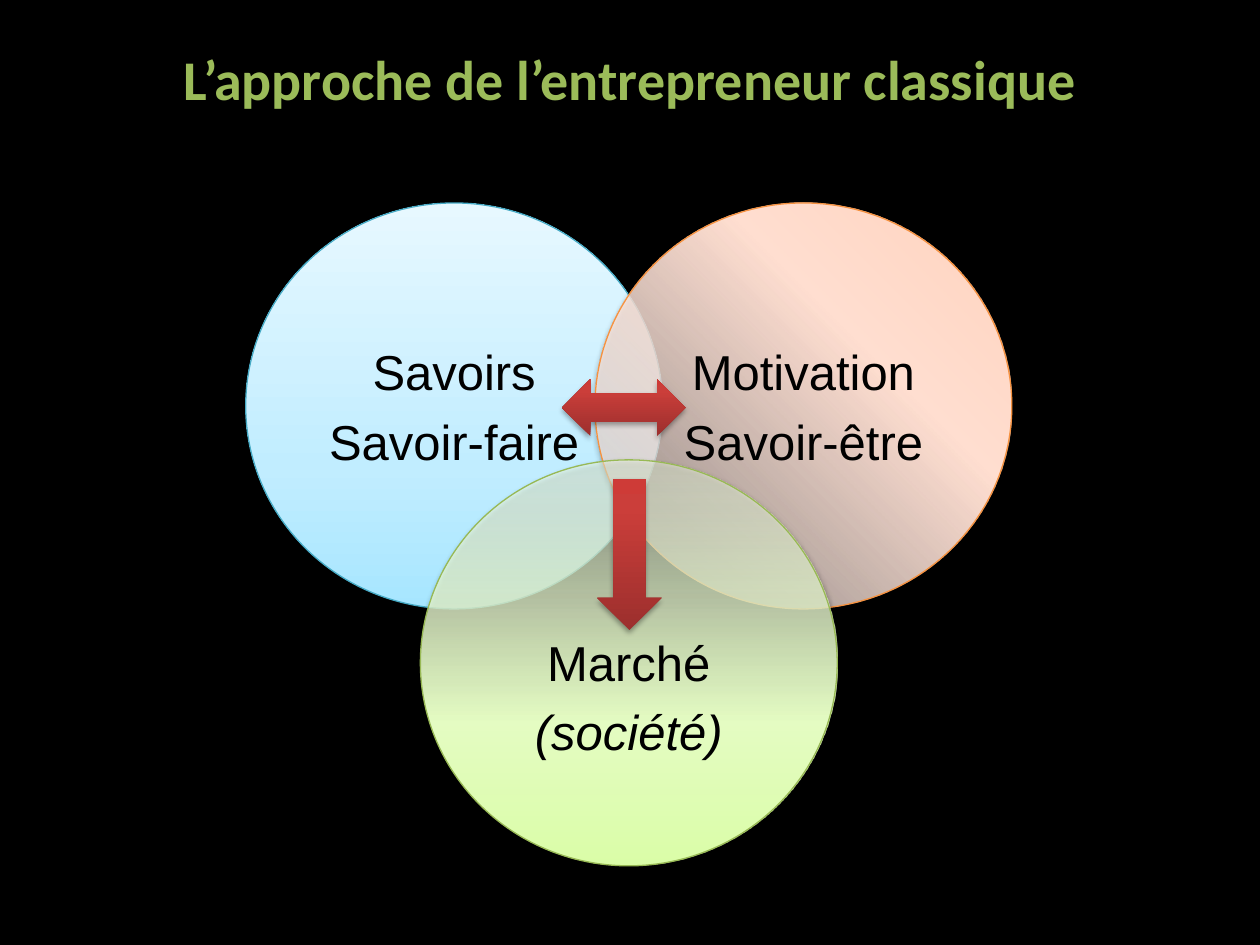
"""Build the slide on the classic entrepreneur's approach: three overlapping circles."""
import pptx
import pptx.util
import pptx.dml.color
import pptx.enum.shapes
import pptx.enum.text
import pptx.oxml
import pptx.oxml.ns

Pt = pptx.util.Pt
SHAPE = pptx.enum.shapes.MSO_SHAPE
CENTER = pptx.enum.text.PP_ALIGN.CENTER
MIDDLE = pptx.enum.text.MSO_ANCHOR.MIDDLE

COLORS = {
    "background": "000000", "title": "9BBB59", "text": "000000", "shadow": "000000",
    "blue_line": "46AAC5", "orange_line": "F69240", "green_line": "98B955",
}
GRADIENTS = {
    "blue": [(0, "A7E6FF", 100), (35, "C1EDFF", 100), (100, "E7F8FF", 100)],
    "orange": [(0, "FFD2BD", 100), (35, "FFDED0", 100), (100, "FFF2ED", 49)],
    "green": [(0, "DAFDA7", 100), (35, "E4FCC2", 100), (100, "F5FFE7", 49)],
    "red": [(0, "9C2F2D", 100), (80, "CB3E3A", 100), (100, "CE3B37", 100)],
}
TITLE = "L’approche de l’entrepreneur classique"
CIRCLES = [
    {"color": "blue", "column": 0, "row": 0, "angle": 90, "inset": 3.6,
     "lines": [("Savoirs", False), ("Savoir-faire", False)]},
    {"color": "orange", "column": 2, "row": 0, "angle": 225, "inset": 3.6,
     "lines": [("Motivation", False), ("Savoir-être", False)]},
    {"color": "green", "column": 1, "row": 1, "angle": 90, "inset": 42,
     "lines": [("Marché", False), ("(société)", True)]},
]
ARROWS = [
    (SHAPE.DOWN_ARROW, 341.3, 273.6, 36.7, 86.4),
    (SHAPE.LEFT_RIGHT_ARROW, 321.1, 216.7, 70.6, 32.4),
]
LEFT, TOP = 140.4, 116
STEP_X, STEP_Y = 99.8, 146.8
CIRCLE_W, CIRCLE_H = 238.2, 232


def rgb(name):
    return pptx.dml.color.RGBColor.from_string(COLORS[name])


def color_xml(value, alpha):
    return f'<a:srgbClr val="{value}"><a:alpha val="{alpha * 1000}"/></a:srgbClr>'


def add_xml(parent, tag, attributes, color):
    ns = pptx.oxml.ns.nsdecls("a")
    parent.append(pptx.oxml.parse_xml(f"<a:{tag} {ns} {attributes}>{color}</a:{tag}>"))


def add_shape(slide, kind, box, gradient, angle, shadow):
    s = slide.shapes.add_shape(kind, *map(Pt, box))
    s.fill.gradient()
    s.fill.gradient_angle = angle
    qn = pptx.oxml.ns.qn
    stops = s.element.spPr.find(qn("a:gradFill")).find(qn("a:gsLst"))
    for stop in list(stops):
        stops.remove(stop)
    for position, value, alpha in GRADIENTS[gradient]:
        add_xml(stops, "gs", f'pos="{position * 1000}"', color_xml(value, alpha))
    s.line.fill.background()
    s.shadow.inherit = False
    distance, alpha = shadow
    add_xml(s.element.spPr.find(qn("a:effectLst")), "outerShdw",
            f'blurRad="{Pt(3.1)}" dist="{Pt(distance)}" dir="5400000" rotWithShape="0"',
            color_xml(COLORS["shadow"], alpha))
    return s


def add_circle(slide, circle):
    box = (LEFT + circle["column"] * STEP_X, TOP + circle["row"] * STEP_Y, CIRCLE_W, CIRCLE_H)
    s = add_shape(slide, SHAPE.OVAL, box, circle["color"], circle["angle"], (1.6, 38))
    s.line.color.rgb = rgb(circle["color"] + "_line")
    s.line.width = Pt(0.75)
    tf = s.text_frame
    tf.word_wrap = True
    tf.vertical_anchor = MIDDLE
    tf.margin_left = tf.margin_right = 0
    tf.margin_top, tf.margin_bottom = Pt(circle["inset"]), Pt(3.6)
    tf.text = "\n".join(text for text, _ in circle["lines"])
    for p, (_, italic) in zip(tf.paragraphs, circle["lines"]):
        p.alignment = CENTER
        p.space_after = Pt(6)
        font = p.runs[0].font
        font.name, font.size, font.italic = "Arial", Pt(28), italic
        font.color.rgb = rgb("text")


def add_title(slide):
    s = slide.shapes.title
    s.left, s.top, s.width, s.height = map(Pt, (36, 21.6, 648, 46))
    tf = s.text_frame
    tf.text = TITLE
    tf.vertical_anchor = MIDDLE
    p = tf.paragraphs[0]
    p.alignment = CENTER
    font = p.runs[0].font
    font.name, font.size, font.bold = "Calibri", Pt(32), True
    font.color.rgb = rgb("title")


def main():
    prs = pptx.Presentation()
    prs.slide_width, prs.slide_height = Pt(720), Pt(540)
    slide = prs.slides.add_slide(prs.slide_layouts[5])
    slide.background.fill.solid()
    slide.background.fill.fore_color.rgb = rgb("background")
    add_title(slide)
    for circle in CIRCLES:
        add_circle(slide, circle)
    for kind, *box in ARROWS:
        add_shape(slide, kind, box, "red", 90, (1.8, 35))
    prs.save("out.pptx")


if __name__ == "__main__":
    main()
